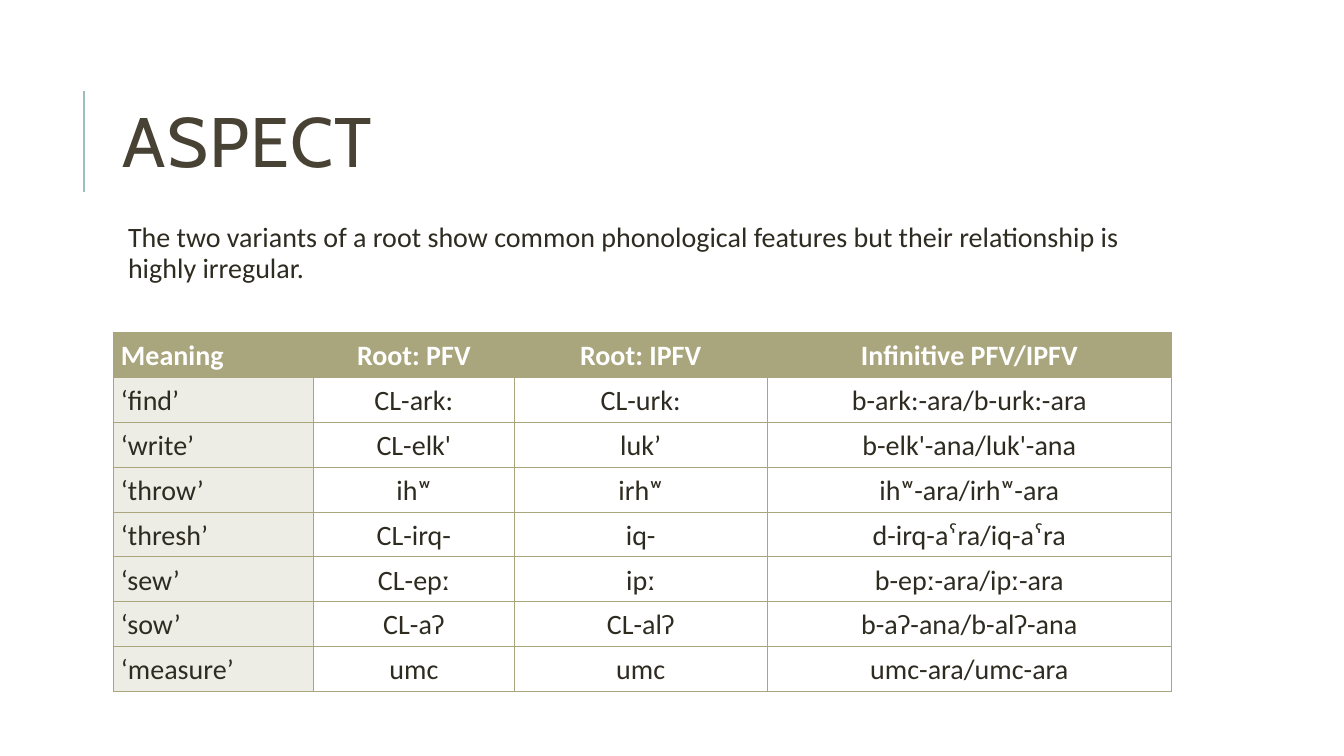
from pptx import Presentation
from pptx.dml.color import RGBColor
from pptx.enum import shapes, text
from pptx.oxml import xmlchemy
from pptx import util as u

OLIVE = RGBColor(0xA9, 0xA5, 0x7C)
PALE = RGBColor(0xEE, 0xED, 0xE5)
TEAL = RGBColor(0x9C, 0xBE, 0xBD)
BROWN = RGBColor(0x47, 0x42, 0x33)
INK = RGBColor(0x2E, 0x2B, 0x21)
WHITE = RGBColor(0xFF, 0xFF, 0xFF)

COLUMN_WIDTHS = [1.98, 1.99, 2.51, 4.01]
ROOTS = [
    ["Meaning", "Root: PFV", "Root: IPFV", "Infinitive PFV/IPFV"],
    ["‘find’", "CL-ark:", "CL-urk:", "b-ark:-ara/b-urk:-ara"],
    ["‘write’", "CL-elk'", "luk’", "b-elk'-ana/luk'-ana"],
    ["‘throw’", "ihʷ", "irhʷ", "ihʷ-ara/irhʷ-ara"],
    ["‘thresh’", "CL-irq-", "iq-", "d-irq-aˁra/iq-aˁra"],
    ["‘sew’", "CL-epː", "ipː", "b-epː-ara/ipː-ara"],
    ["‘sow’", "CL-aʡ", "CL-alʡ", "b-aʡ-ana/b-alʡ-ana"],
    ["‘measure’", "umc", "umc", "umc-ara/umc-ara"],
]


def set_values(target, values):
    for name, value in values.items():
        setattr(target, name, value)


def add_child(parent, tag, **attributes):
    child = xmlchemy.OxmlElement(tag)
    for name, value in attributes.items():
        child.set(name, value)
    parent.append(child)
    return child


class SlideBuilder:
    body_font = {"name": "Calibri", "size": u.Pt(20), "bold": False}

    def __init__(self, page):
        self.page = page

    def add_words(self, frame, words, color, font=None, **para_format):
        para = frame.paragraphs[0]
        set_values(para, para_format)
        span = para.add_run()
        span.text = words
        set_values(span.font, font or self.body_font)
        span.font.color.rgb = color
        return span

    def line(self, start, end, color, width):
        line = self.page.shapes.add_connector(
            shapes.MSO_CONNECTOR.STRAIGHT, *map(u.Inches, start + end))
        line.line.color.rgb = color
        line.line.width = u.Pt(width)
        add_child(line._element.spPr, "a:effectLst")

    def text_box(self, place, words, color, font=None, frame_format=None, **para_format):
        box = self.page.shapes.add_textbox(*map(u.Inches, place))
        set_values(box.text_frame, {"word_wrap": True, **(frame_format or {})})
        return self.add_words(box.text_frame, words, color, font, **para_format)

    def borders(self, cell):
        properties = cell._tc.get_or_add_tcPr()
        for index, side in enumerate(["a:lnL", "a:lnR", "a:lnT", "a:lnB"]):
            edge = xmlchemy.OxmlElement(side)
            edge.set("w", str(u.Pt(0.75)))
            fill = add_child(edge, "a:solidFill")
            add_child(fill, "a:srgbClr", val=str(OLIVE))
            properties.insert(index, edge)

    def table(self, place, rows, widths):
        frame = self.page.shapes.add_table(
            len(rows), len(widths), *map(u.Inches, place))
        table = frame.table
        for column, width in zip(table.columns, widths):
            column.width = u.Inches(width)
        for row_index, row in enumerate(rows):
            table.rows[row_index].height = u.Inches(place[3] / len(rows))
            for column_index, words in enumerate(row):
                self.cell(table.cell(row_index, column_index), words,
                          row_index == 0, column_index == 0)

    def cell(self, cell, words, is_header, is_first):
        set_values(cell, {
            "margin_left": u.Inches(0.07), "margin_right": u.Inches(0.07),
            "margin_top": 0, "margin_bottom": 0,
            "vertical_anchor": text.MSO_ANCHOR.MIDDLE})
        if is_header or is_first:
            cell.fill.solid()
            cell.fill.fore_color.rgb = OLIVE if is_header else PALE
        else:
            cell.fill.background()
        self.borders(cell)
        self.add_words(
            cell.text_frame, words, WHITE if is_header else INK,
            {**self.body_font, "bold": is_header},
            alignment=text.PP_ALIGN.JUSTIFY if is_first else text.PP_ALIGN.CENTER,
            line_spacing=1.07, space_after=u.Pt(2 if is_header else 0))


def main():
    deck = Presentation()
    set_values(deck, {"slide_width": u.Inches(13.33), "slide_height": u.Inches(7.5)})
    builder = SlideBuilder(deck.slides.add_slide(deck.slide_layouts[6]))
    builder.line((0.83, 1.9), (0.83, 0.9), TEAL, 1.5)
    title = builder.text_box(
        (1.12, 0.64, 10.63, 1.64), "ASPECT", BROWN,
        {"name": "Cabin", "size": u.Pt(50)},
        {"vertical_anchor": text.MSO_ANCHOR.MIDDLE}, line_spacing=0.8)
    title.font._element.set("spc", "100")
    builder.table((1.13, 3.3, 10.49, 3.56), ROOTS, COLUMN_WIDTHS)
    margins = {"margin_left": 0.15, "margin_right": 0.05,
               "margin_top": 0.05, "margin_bottom": 0.05}
    builder.text_box(
        (1.12, 2.17, 10.5, 0.76),
        "The two variants of a root show common phonological features "
        "but their relationship is highly irregular.", INK,
        frame_format={side: u.Inches(size) for side, size in margins.items()},
        line_spacing=0.9, space_after=u.Pt(2))
    deck.save("out.pptx")


if __name__ == "__main__":
    main()
